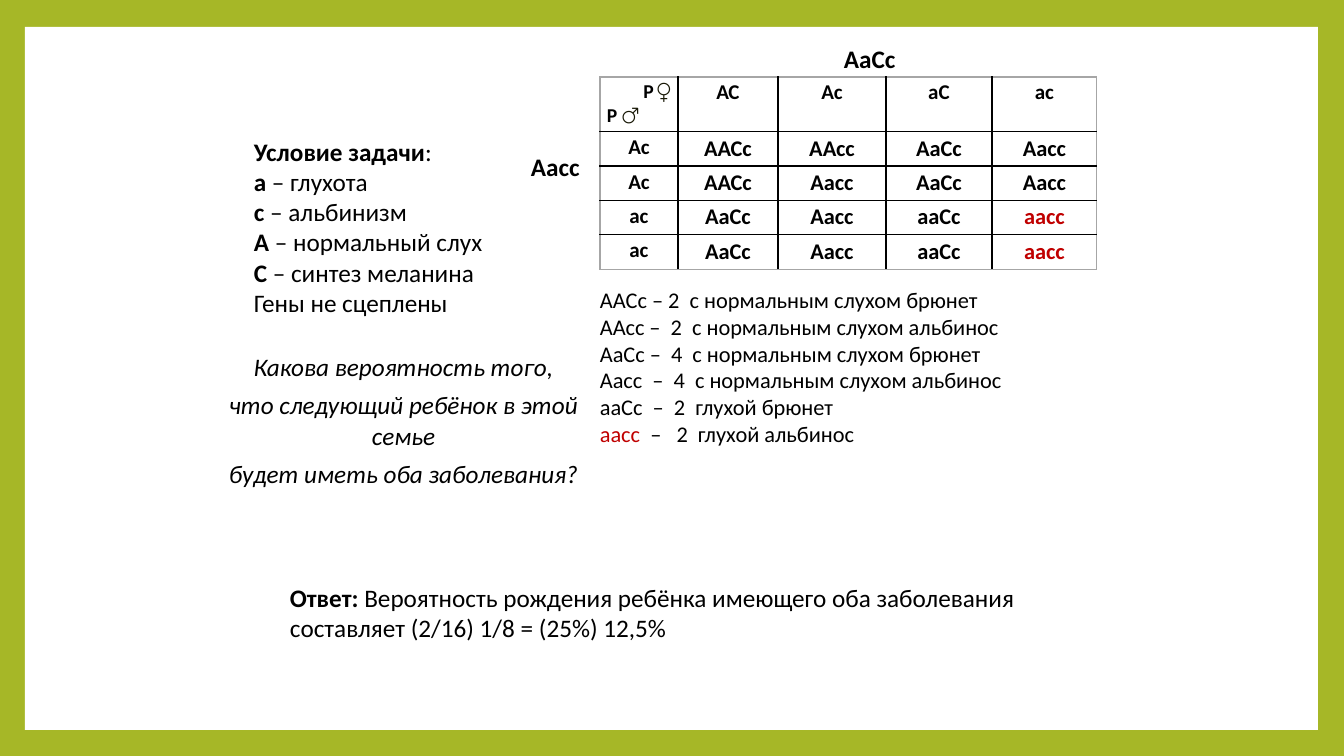
import pptx
import pptx.util
import pptx.dml.color
import pptx.enum.shapes
import pptx.enum.text
import pptx.oxml.ns
import lxml.etree

RGBColor = pptx.dml.color.RGBColor
PP_ALIGN = pptx.enum.text.PP_ALIGN
GREEN = RGBColor(0xA6, 0xB7, 0x27)
WHITE = RGBColor(0xFF, 0xFF, 0xFF)
BLACK = RGBColor(0x00, 0x00, 0x00)
OLIVE = RGBColor(0x17, 0x17, 0x05)
RED = RGBColor(0xC0, 0x00, 0x00)
GRAY = RGBColor(0xA6, 0xA6, 0xA6)
EMU_PER_PX = 12192000 / 1344
BOLD = {"bold": True}


def px(*lengths):
    return [pptx.util.Emu(round(length * EMU_PER_PX)) for length in lengths]


def write(frame, paragraphs, size, alignment=PP_ALIGN.LEFT, space_after=0):
    for index, runs in enumerate(paragraphs):
        paragraph = frame.paragraphs[0] if index == 0 else frame.add_paragraph()
        paragraph.alignment = alignment
        paragraph.space_after = pptx.util.Pt(space_after)
        for text, style in runs:
            run = paragraph.add_run()
            run.text = text
            style = {"name": "Calibri", "size": size, "color": BLACK, **style}
            run.font.color.rgb = style.pop("color")
            style["size"] = pptx.util.Pt(style["size"])
            for attribute, value in style.items():
                setattr(run.font, attribute, value)


presentation = pptx.Presentation()
presentation.slide_width, presentation.slide_height = px(1344, 756)
slide = presentation.slides.add_slide(presentation.slide_layouts[6])
slide.background.fill.solid()
slide.background.fill.fore_color.rgb = GREEN

panel = slide.shapes.add_shape(
    pptx.enum.shapes.MSO_SHAPE.RECTANGLE, *px(25, 27, 1293, 703))
panel.shadow.inherit = False
panel.fill.solid()
panel.fill.fore_color.rgb = WHITE
panel.line.fill.background()

CROSS = [
    ["", "АС", "Ас", "аС", "ас"],
    ["Ас", "ААСс", "ААсс", "АаСс", "Аасс"],
    ["Ас", "ААСс", "Аасс", "АаСс", "Аасс"],
    ["ас", "АаСс", "Аасс", "ааСс", "аасс"],
    ["ас", "АаСс", "Аасс", "ааСс", "аасс"],
]
column_widths = px(78, 100, 108, 106, 105)
row_heights = px(54, 34, 34, 34, 34)
graphic_frame = slide.shapes.add_table(5, 5, *px(600, 77, 497, 190))
table = graphic_frame.table
table.first_row = False
table.horz_banding = False
for column, width in zip(table.columns, column_widths):
    column.width = width
for row, height in zip(table.rows, row_heights):
    row.height = height

for row_index, genotypes in enumerate(CROSS):
    for column_index, genotype in enumerate(genotypes):
        cell = table.cell(row_index, column_index)
        cell.margin_left, cell.margin_right = px(7, 7)
        cell.margin_top, cell.margin_bottom = px(3, 4)
        properties = cell._tc.get_or_add_tcPr()
        outer_edges = {"a:lnL": column_index == 0, "a:lnR": column_index == 4,
                       "a:lnT": row_index == 0, "a:lnB": row_index == 4}
        for tag, outer in outer_edges.items():
            border = lxml.etree.SubElement(
                properties, pptx.oxml.ns.qn(tag), w="12700")
            fill = lxml.etree.SubElement(border, pptx.oxml.ns.qn("a:solidFill"))
            lxml.etree.SubElement(fill, pptx.oxml.ns.qn("a:srgbClr"),
                                  val=str(GRAY if outer else BLACK))
        cell.fill.solid()
        cell.fill.fore_color.rgb = WHITE
        if genotype:
            size = 15 if row_index == 0 or column_index == 0 else 16
            color = RED if column_index == 4 and row_index > 2 else BLACK
            write(cell.text_frame, [[(genotype, {"bold": True, "color": color})]],
                  size, PP_ALIGN.CENTER)

symbol = {"bold": True, "color": OLIVE}
corner = table.cell(0, 0).text_frame
write(corner, [
    [("Р", BOLD), (" ", {**symbol, "size": 10}), ("♀", symbol)],
    [("Р", BOLD), (" ♂", symbol)],
], 14)
corner.paragraphs[0].alignment = PP_ALIGN.RIGHT

condition = [[("Условие задачи", BOLD), (":", {})]]
for gene, trait in [("а", "глухота"), ("с", "альбинизм"),
                    ("А", "нормальный слух"), ("С", "синтез меланина")]:
    condition.append([(gene, BOLD), (f" – {trait}", {})])
condition.append([("Гены не сцеплены", {})])

question = [[(line, {"italic": True})] for line in [
    "Какова вероятность того,",
    "что следующий ребёнок в этой семье",
    "будет иметь оба заболевания?",
]]

phenotypes = [[(line, {})] for line in [
    "AАCс – 2  с нормальным слухом брюнет",
    "AАсc –  2  с нормальным слухом альбинос",
    "АaCс –  4  с нормальным слухом брюнет",
    "Аaсc  –  4  с нормальным слухом альбинос",
    "аaСc  –  2  глухой брюнет",
]]
phenotypes.append([("аacc  ", {"color": RED}), ("–   2  глухой альбинос", {})])

answer = [
    [("Ответ: ", BOLD),
     ("Вероятность рождения ребёнка имеющего оба заболевания", {})],
    [("составляет (2/16) 1/8 = (25%) 12,5%", {})],
]

text_boxes = [
    ((834, 38, 72, 40), [[("АаСс", BOLD)]], 18, PP_ALIGN.LEFT, 0, False),
    ((521, 146, 70, 40), [[("Аaсc", BOLD)]], 18, PP_ALIGN.LEFT, 0, False),
    ((244, 131, 279, 194), condition, 18, PP_ALIGN.LEFT, 0, True),
    ((218, 346, 371, 149), question, 18, PP_ALIGN.CENTER, 6, True),
    ((590, 281, 531, 173), phenotypes, 16, PP_ALIGN.LEFT, 0, True),
    ((280, 577, 759, 94), answer, 18, PP_ALIGN.LEFT, 0, True),
]
for place, paragraphs, size, alignment, space_after, wrap in text_boxes:
    frame = slide.shapes.add_textbox(*px(*place)).text_frame
    frame.word_wrap = wrap
    write(frame, paragraphs, size, alignment, space_after)

presentation.save("out.pptx")
